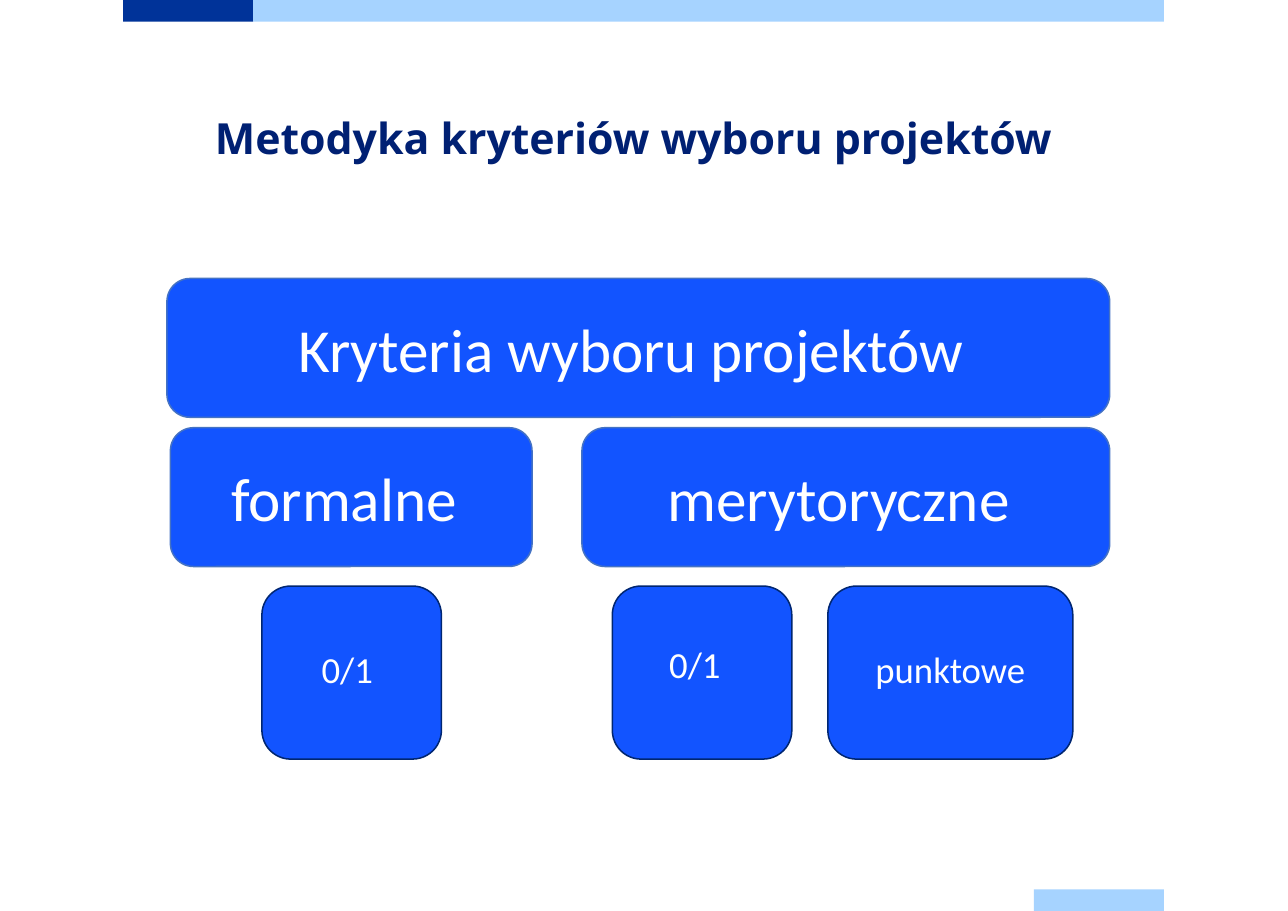
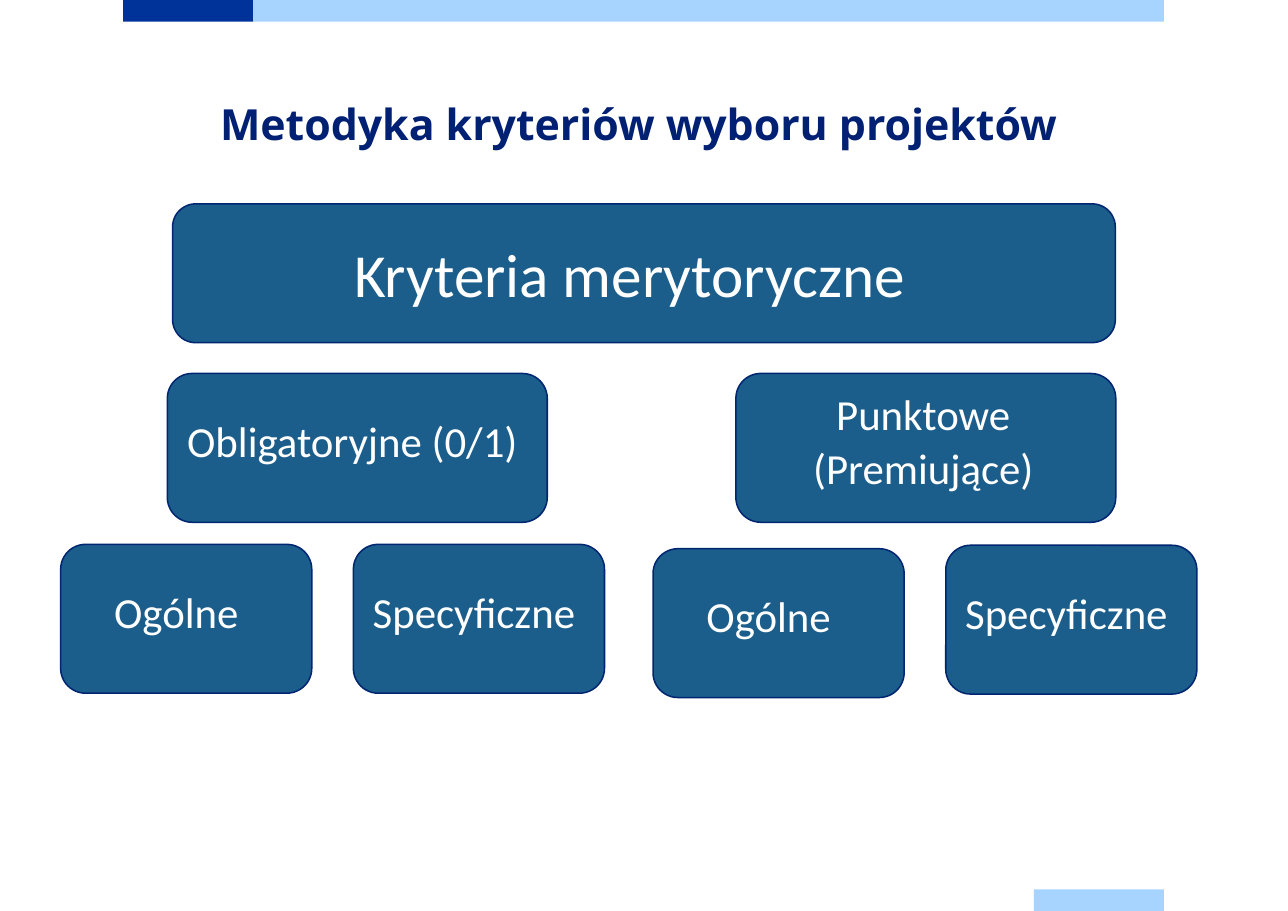
from dataclasses import dataclass
from typing import Any

from pptx import Presentation
from pptx.dml.color import RGBColor
from pptx.enum.shapes import MSO_SHAPE
from pptx.enum.text import MSO_ANCHOR, MSO_AUTO_SIZE, PP_ALIGN
from pptx.util import Cm, Pt

NAVY, SKY, TITLE_INK, WHITE = "003399", "A6D3FF", "002073", "FFFFFF"
BRIGHT, STEEL, SOFT_EDGE, DARK_EDGE = "1254FF", "1B5D8B", "4472C4", "002671"
TITLE = "Metodyka kryteriów wyboru projektów"
INSET = 0.25


@dataclass(frozen=True)
class Style:
    """Look of a criteria box; leading and gap are in points."""
    fill: str
    edge: str
    size: int
    leading: int | None = 24
    gap: int = 11


@dataclass(frozen=True)
class Box:
    """Rounded box in centimetres, with extra right and bottom insets."""
    text: str
    x: float
    y: float
    w: float
    h: float
    style: Style
    right: float = 0
    bottom: float = 0


@dataclass(frozen=True)
class Page:
    """Title placement and boxes of one slide."""
    title_y: float
    title_h: float
    title_right: float
    boxes: list[Box]


BANDS = [(2.84, 0, 3.0, NAVY), (5.84, 0, 21.0, SKY), (23.84, 20.5, 3.0, SKY)]

MAIN = Style(BRIGHT, SOFT_EDGE, 40, None)
LEAF = Style(BRIGHT, DARK_EDGE, 24)
HEAD = Style(STEEL, DARK_EDGE, 40, None)
GROUP = Style(STEEL, DARK_EDGE, 28)

KIND_W, KIND_STEP = 5.79, 6.75
KINDS = [Box(text, left + i * KIND_STEP, y, KIND_W, 3.43, GROUP, right)
         for left, ys in ((1.4, (12.55, 12.55)), (15.06, (12.65, 12.57)))
         for i, (text, y, right) in enumerate(
             zip(("Ogólne", "Specyficzne"), ys, (0.46, 0.23)))]

PAGES = [
    Page(2.49, 2.08, 0.48, [
        Box("Kryteria wyboru projektów", 3.85, 6.42, 21.74, 3.2, MAIN, 0.33),
        Box("formalne", 3.93, 9.86, 8.34, 3.2, MAIN, 0.33),
        Box("merytoryczne", 13.42, 9.86, 12.17, 3.2, MAIN, 0.33),
        Box("0/1", 6.04, 13.51, 4.14, 3.99, LEAF, 0.2),
        Box("0/1", 14.12, 13.51, 4.14, 3.99, LEAF, 0.33, 0.23),
        Box("punktowe", 19.09, 13.51, 5.65, 3.99, LEAF),
    ]),
    Page(2.16, 2.0, 0.24, [
        Box("Kryteria merytoryczne", 3.98, 4.7, 21.74, 3.2, HEAD, 0.66),
        Box("Obligatoryjne (0/1)", 3.86, 8.61, 8.76, 3.43, GROUP, 0.23),
        Box("Punktowe\n(Premiujące)", 16.97, 8.61, 8.76, 3.43, GROUP, 0.12),
        *KINDS,
    ]),
]


def rgb(color: str) -> RGBColor:
    """Turn a hex string into a colour."""
    return RGBColor.from_string(color)


def apply(obj: Any, values: dict[str, Any]) -> None:
    """Set every named attribute on an object."""
    for name, value in values.items():
        setattr(obj, name, value)


def add_block(s: Any, kind: Any, x: float, y: float, w: float, h: float,
              fill: str, edge: str | None = None) -> Any:
    """Draw a filled shape, outlined when an edge colour is given."""
    sp = s.shapes.add_shape(kind, Cm(x), Cm(y), Cm(w), Cm(h))
    sp.shadow.inherit = False
    sp.fill.solid()
    sp.fill.fore_color.rgb = rgb(fill)
    if edge:
        sp.line.color.rgb = rgb(edge)
        sp.line.width = Pt(1)
    else:
        sp.line.fill.background()
    return sp


def write(tf: Any, text: str, frame: dict[str, Any], para: dict[str, Any],
          font: dict[str, Any], color: str, gap: int = 0) -> None:
    """Fill a text frame, one centred paragraph per line."""
    apply(tf, {"word_wrap": True, "auto_size": MSO_AUTO_SIZE.NONE, **frame})
    for i, line in enumerate(text.split("\n")):
        p = tf.add_paragraph() if i else tf.paragraphs[0]
        apply(p, {"alignment": PP_ALIGN.CENTER,
                  "space_before": Pt(gap if i else 0), **para})
        r = p.add_run()
        r.text = line
        apply(r.font, font)
        r.font.color.rgb = rgb(color)


def add_box(s: Any, box: Box) -> None:
    """Draw a criteria box with its label."""
    st = box.style
    sp = add_block(s, MSO_SHAPE.ROUNDED_RECTANGLE, box.x, box.y, box.w, box.h,
                   st.fill, st.edge)
    frame = {"vertical_anchor": MSO_ANCHOR.MIDDLE,
             "margin_left": Cm(INSET), "margin_right": Cm(INSET + box.right),
             "margin_top": Cm(0), "margin_bottom": Cm(box.bottom)}
    para = {"line_spacing": Pt(st.leading) if st.leading else 1.0}
    write(sp.text_frame, box.text, frame, para,
          {"name": "Calibri", "size": Pt(st.size)}, WHITE, st.gap)


def add_title(s: Any, page: Page) -> None:
    """Place and format the title placeholder."""
    title = s.shapes.title
    apply(title, {"left": Cm(2.84), "top": Cm(page.title_y),
                  "width": Cm(24), "height": Cm(page.title_h)})
    frame = {"vertical_anchor": MSO_ANCHOR.TOP, "margin_left": 0,
             "margin_right": Cm(page.title_right),
             "margin_top": 0, "margin_bottom": 0}
    write(title.text_frame, TITLE, frame, {"line_spacing": Pt(36)},
          {"name": "Open Sans", "size": Pt(28), "bold": True}, TITLE_INK)


def add_bands(s: Any, layout: Any) -> None:
    """Draw the bands and move them to the shared layout."""
    for x, y, w, fill in BANDS:
        band = add_block(s, MSO_SHAPE.RECTANGLE, x, y, w, 0.5, fill)
        layout.shapes.element.append(band.element)


def main() -> None:
    """Build and save the presentation."""
    prs = Presentation()
    apply(prs, {"slide_width": Cm(29.7), "slide_height": Cm(21)})
    layout = prs.slide_layouts[5]
    for i, page in enumerate(PAGES):
        s = prs.slides.add_slide(layout)
        if i == 0:
            add_bands(s, layout)
        add_title(s, page)
        for box in page.boxes:
            add_box(s, box)
    prs.save("out.pptx")


if __name__ == "__main__":
    main()
